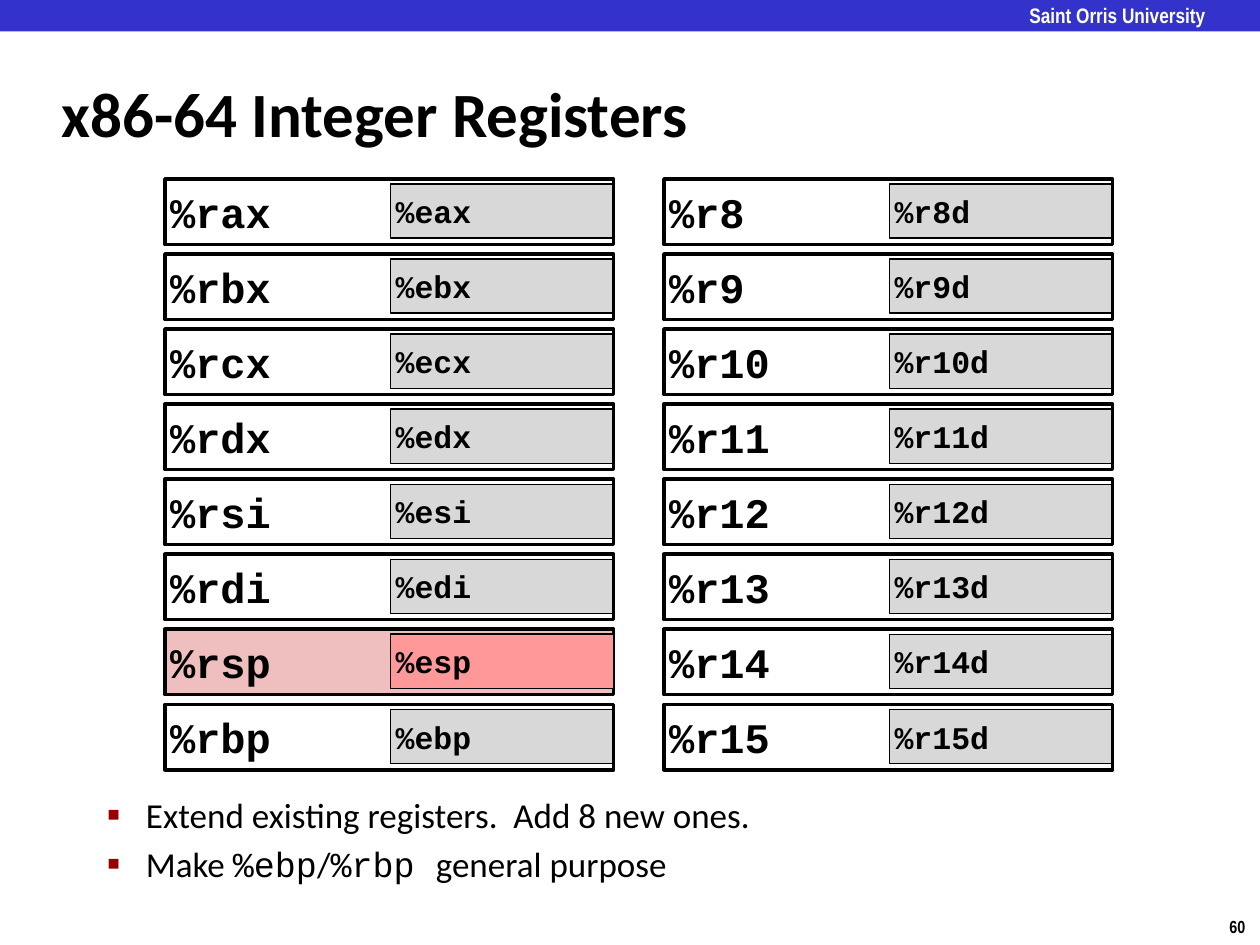
import dataclasses
import pptx
import pptx.util
import pptx.dml.color
import pptx.enum.shapes
import pptx.enum.text
import pptx.oxml
import pptx.oxml.ns
from pptx.util import Inches, Pt

Align = pptx.enum.text.PP_ALIGN
Anchor = pptx.enum.text.MSO_ANCHOR
Rect = pptx.enum.shapes.MSO_SHAPE.RECTANGLE


@dataclasses.dataclass(frozen=True)
class Theme:
    ink: str = "000000"
    paper: str = "FFFFFF"
    bar: str = "3333CC"
    mark: str = "990000"
    half: str = "D8D8D8"
    hot: str = "EFBFBF"
    hothalf: str = "FF9999"
    sans: str = "Calibri"
    narrow: str = "Arial Narrow"
    mono: str = "Courier New"
    title: int = 36
    reg: int = 24
    sub: int = 18
    body: int = 20
    head: int = 12
    foot: int = 10


theme = Theme()
LEFT = ["ax", "bx", "cx", "dx", "si", "di", "sp", "bp"]
BANKS = [
    [("%r" + name, "%e" + name) for name in LEFT],
    [(f"%r{n}", f"%r{n}d") for n in range(8, 16)],
]
NOTES = [
    [("Extend existing registers.  Add 8 new ones.", theme.sans)],
    [("Make ", theme.sans), ("%ebp", theme.mono), ("/", theme.sans),
     ("%rbp ", theme.mono), ("general purpose", theme.sans)],
]


def color(code):
    return pptx.dml.color.RGBColor.from_string(code)


def style(font, face, size, code=theme.ink, bold=True):
    font.name, font.size, font.bold = face, Pt(size), bold
    font.color.rgb = color(code)


def inset(frame, gap):
    frame.margin_left = frame.margin_right = Inches(gap)
    frame.margin_top = frame.margin_bottom = Inches(gap)


def indent(par, left, first):
    props = par._p.get_or_add_pPr()
    props.set("marL", str(Inches(left)))
    props.set("indent", str(Inches(first)))
    return props


def bullet(par):
    props = indent(par, 0.81, -0.31)
    space = pptx.oxml.ns.nsdecls("a")
    for part in (
        f'<a:buClr {space}><a:srgbClr val="{theme.mark}"/></a:buClr>',
        f'<a:buSzPct {space} val="110000"/>',
        f'<a:buFont {space} typeface="{theme.sans}"/>',
        f'<a:buChar {space} char="▪"/>',
    ):
        props.append(pptx.oxml.parse_xml(part))


def rect(shapes, box, fill=None, line=None):
    shape = shapes.add_shape(Rect, *map(Inches, box))
    shape.shadow.inherit = False
    if fill:
        shape.fill.solid()
        shape.fill.fore_color.rgb = color(fill)
    else:
        shape.fill.background()
    if line:
        shape.line.color.rgb = color(theme.ink)
        shape.line.width = Pt(line)
    else:
        shape.line.fill.background()
    return shape


def cell(shapes, box, text, size, fill, line):
    frame = rect(shapes, box, fill, line).text_frame
    inset(frame, 0.04)
    frame.vertical_anchor = Anchor.MIDDLE
    par = frame.paragraphs[0]
    par.text, par.alignment = text, Align.LEFT
    style(par.font, theme.mono, size)


def label(slide, box, text, size, code):
    frame = slide.shapes.add_textbox(*map(Inches, box)).text_frame
    par = frame.paragraphs[0]
    par.text = text
    style(par.font, theme.narrow, size, code)
    return frame


def header(slide, box):
    left, top, width, height = box
    rect(slide.shapes, box, theme.bar)
    spot = (left + width - 1.83, top + 0.02, 1.67, height - 0.06)
    frame = label(slide, spot, "Saint Orris University", theme.head, theme.paper)
    inset(frame, 0)
    frame.word_wrap = True


def title(slide, box):
    shape = slide.shapes.title
    shape.left, shape.top, shape.width, shape.height = map(Inches, box)
    frame = shape.text_frame
    frame.vertical_anchor = Anchor.MIDDLE
    par = frame.paragraphs[0]
    par.text, par.alignment = "x86-64 Integer Registers", Align.LEFT
    indent(par, 0.13, -0.13)
    style(par.font, theme.sans, theme.title)


def register(slide, box, whole, half):
    left, top, width, height = box
    inner = (left + width - 1.77, top + 0.04, 1.77, height - 0.09)
    hot = whole == "%rsp"
    outer = (box, whole, theme.reg, theme.hot if hot else None, 2)
    low = (inner, half, theme.sub, theme.hothalf if hot else theme.half,
           1 if hot else 0.75)
    group = slide.shapes.add_group_shape()
    for part in (outer, low) if hot else (low, outer):
        cell(group.shapes, *part)


def bank(slide, box, pairs):
    left, top, width, height = box
    tall = 0.52
    step = (height - tall) / (len(pairs) - 1)
    for row, (whole, half) in enumerate(pairs):
        register(slide, (left, top + row * step, width, tall), whole, half)


def notes(slide, box):
    frame = slide.shapes.add_textbox(*map(Inches, box)).text_frame
    frame.word_wrap = True
    for row, runs in enumerate(NOTES):
        par = frame.add_paragraph() if row else frame.paragraphs[0]
        par.space_before = Pt(4 * row)
        bullet(par)
        for text, face in runs:
            run = par.add_run()
            run.text = text
            style(run.font, face, theme.body, bold=False)


def number(slide, box):
    label(slide, box, "60", theme.foot, theme.ink).word_wrap = False


def main():
    deck = pptx.Presentation()
    deck.slide_width, deck.slide_height = Inches(10), Inches(7.5)
    slide = deck.slides.add_slide(deck.slide_layouts[5])
    header(slide, (0, 0, 10, 0.25))
    title(slide, (0.39, 0.48, 8.3, 0.83))
    for left, pairs in zip((1.31, 5.27), BANKS):
        bank(slide, (left, 1.42, 3.56, 4.69), pairs)
    notes(slide, (0.25, 6.25, 8.02, 0.92))
    number(slide, (9.66, 7.22, 0.34, 0.27))
    deck.save("out.pptx")


if __name__ == "__main__":
    main()
